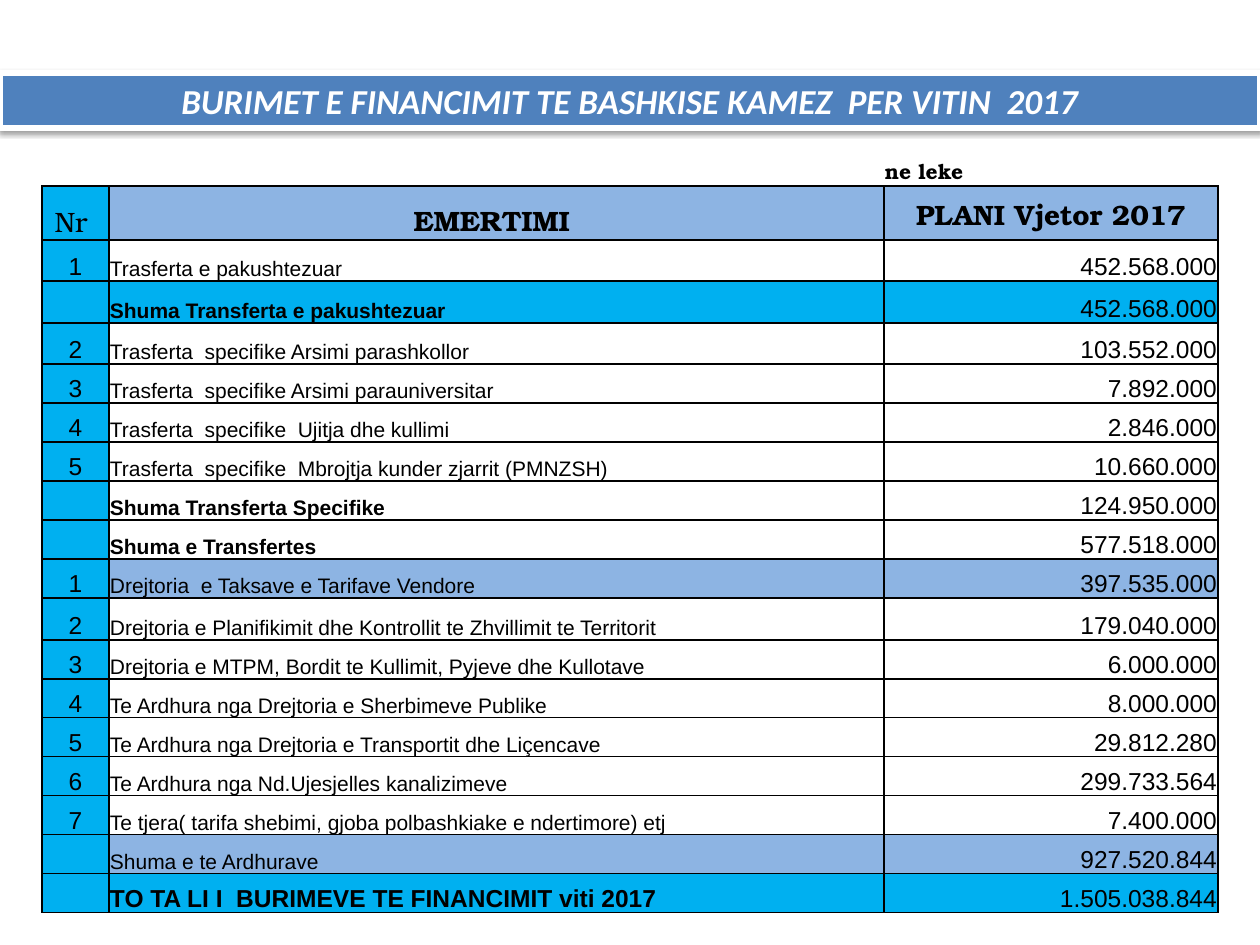
from dataclasses import dataclass

from lxml.etree import SubElement
from pptx import Presentation
from pptx.dml.color import RGBColor
from pptx.enum.shapes import MSO_SHAPE as Shape
from pptx.enum.text import MSO_ANCHOR as Anchor, PP_ALIGN as Align
from pptx.oxml import parse_xml
from pptx.oxml.ns import nsdecls, qn
from pptx.util import Emu, Pt

PX = 914400 / 126


def px(length: int) -> Emu:
    return Emu(round(length * PX))


@dataclass(frozen=True)
class Theme:
    title_font: str = "Calibri"
    header_font: str = "TeX Gyre Bonum"
    body_font: str = "Arial"
    title_size: int = 20
    header_size: int = 16
    value_size: int = 14
    label_size: int = 12
    black: str = "000000"
    white: str = "FFFFFF"
    banner: str = "4F81BD"
    cyan: str = "00B0F0"
    blue: str = "8DB4E3"


THEME = Theme()


@dataclass(frozen=True)
class Style:
    font: str
    size: int
    bold: bool = False
    italic: bool = False
    color: str = THEME.black
    align: Align = Align.LEFT


@dataclass(frozen=True)
class Source:
    number: str
    label: str
    value: str
    fill: str = THEME.white
    bold: bool = False
    height: int = 39
    label_size: int = THEME.label_size


SOURCES = [
    Source("1", "Trasferta e pakushtezuar", "452.568.000", height=41),
    Source("", "Shuma Transferta e pakushtezuar", "452.568.000", THEME.cyan, True, 42),
    Source("2", "Trasferta  specifike Arsimi parashkollor", "103.552.000", height=41),
    Source("3", "Trasferta  specifike Arsimi parauniversitar", "7.892.000"),
    Source("4", "Trasferta  specifike  Ujitja dhe kullimi", "2.846.000"),
    Source("5", "Trasferta  specifike  Mbrojtja kunder zjarrit (PMNZSH)", "10.660.000"),
    Source("", "Shuma Transferta Specifike", "124.950.000", bold=True),
    Source("", "Shuma e Transfertes", "577.518.000", bold=True),
    Source("1", "Drejtoria  e Taksave e Tarifave Vendore", "397.535.000", THEME.blue),
    Source("2", "Drejtoria e Planifikimit dhe Kontrollit te Zhvillimit te Territorit",
           "179.040.000", height=42),
    Source("3", "Drejtoria e MTPM, Bordit te Kullimit, Pyjeve dhe Kullotave", "6.000.000"),
    Source("4", "Te Ardhura nga Drejtoria e Sherbimeve Publike", "8.000.000"),
    Source("5", "Te Ardhura nga Drejtoria e Transportit dhe Liçencave", "29.812.280"),
    Source("6", "Te Ardhura nga Nd.Ujesjelles kanalizimeve", "299.733.564"),
    Source("7", "Te tjera( tarifa shebimi, gjoba polbashkiake e ndertimore) etj", "7.400.000"),
    Source("", "Shuma e te Ardhurave", "927.520.844", THEME.blue),
    Source("", "TO TA LI I  BURIMEVE TE FINANCIMIT viti 2017", "1.505.038.844",
           THEME.cyan, True, label_size=THEME.value_size),
]
COLUMN_WIDTHS = (67, 775, 334)
UNIT_HEIGHT, HEADER_HEIGHT = 39, 54


def write(frame, text: str, style: Style) -> None:
    para = frame.paragraphs[0]
    para.alignment = style.align
    font = para.font
    font.name, font.size = style.font, Pt(style.size)
    font.bold, font.italic = style.bold, style.italic
    font.color.rgb = RGBColor.from_string(style.color)
    if text:
        para.add_run().text = text


def add_borders(cell, visible: tuple[str, ...]) -> None:
    properties = cell._tc.get_or_add_tcPr()
    for side in ("lnL", "lnR", "lnT", "lnB"):
        line = SubElement(properties, qn(f"a:{side}"), w=str(Pt(1)))
        if side in visible:
            fill = SubElement(line, qn("a:solidFill"))
            SubElement(fill, qn("a:srgbClr"), val=THEME.black)
        else:
            SubElement(line, qn("a:noFill"))


def fill_cell(cell, text: str, style: Style, fill: str | None,
              anchor: Anchor = Anchor.BOTTOM,
              borders: tuple[str, ...] = ("lnL", "lnR", "lnT", "lnB")) -> None:
    cell.margin_left = cell.margin_right = cell.margin_top = px(1)
    cell.margin_bottom = 0
    cell.vertical_anchor = anchor
    write(cell.text_frame, text, style)
    add_borders(cell, borders)
    if fill:
        cell.fill.solid()
        cell.fill.fore_color.rgb = RGBColor.from_string(fill)
    else:
        cell.fill.background()


def add_banner(page, text: str) -> None:
    box = page.shapes.add_shape(Shape.RECTANGLE, 0, px(73), px(1260), px(55))
    box.fill.solid()
    box.fill.fore_color.rgb = RGBColor.from_string(THEME.banner)
    box.line.color.rgb = RGBColor.from_string(THEME.white)
    box.line.width = Pt(3)
    box._element.spPr.append(parse_xml(
        f'<a:effectLst {nsdecls("a")}><a:outerShdw blurRad="{Pt(3.1)}" dist="{Pt(1.6)}" '
        f'dir="5400000" rotWithShape="0"><a:srgbClr val="{THEME.black}">'
        '<a:alpha val="38000"/></a:srgbClr></a:outerShdw></a:effectLst>'))
    frame = box.text_frame
    frame.word_wrap = True
    frame.vertical_anchor = Anchor.MIDDLE
    write(frame, text, Style(THEME.title_font, THEME.title_size, True, True,
                             THEME.white, Align.CENTER))


def add_sources_table(page) -> None:
    heights = [UNIT_HEIGHT, HEADER_HEIGHT] + [source.height for source in SOURCES]
    table = page.shapes.add_table(len(heights), len(COLUMN_WIDTHS), px(42), px(147),
                                  px(sum(COLUMN_WIDTHS)), px(sum(heights))).table
    table.first_row = table.horz_banding = False
    for column, width in zip(table.columns, COLUMN_WIDTHS):
        column.width = px(width)
    for row, height in zip(table.rows, heights):
        row.height = px(height)

    # Unit row: only its bottom edge is ruled
    unit = Style(THEME.header_font, THEME.label_size, True)
    for column, text in enumerate(("", "", "ne leke")):
        fill_cell(table.cell(0, column), text, unit, None, borders=("lnB",))

    # Column headings
    headings = (("Nr ", THEME.cyan, False, Anchor.BOTTOM),
                ("EMERTIMI ", THEME.blue, True, Anchor.BOTTOM),
                ("PLANI Vjetor 2017", THEME.blue, True, Anchor.MIDDLE))
    for column, (text, fill, bold, anchor) in enumerate(headings):
        style = Style(THEME.header_font, THEME.header_size, bold, align=Align.CENTER)
        fill_cell(table.cell(1, column), text, style, fill, anchor)

    # Financing sources and subtotals
    number = Style(THEME.body_font, THEME.value_size, align=Align.CENTER)
    value = Style(THEME.body_font, THEME.value_size, align=Align.RIGHT)
    for row, source in enumerate(SOURCES, start=2):
        label = Style(THEME.body_font, source.label_size, source.bold)
        fill_cell(table.cell(row, 0), source.number, number, THEME.cyan)
        fill_cell(table.cell(row, 1), source.label, label, source.fill)
        fill_cell(table.cell(row, 2), source.value, value, source.fill)


def main() -> None:
    deck = Presentation()
    deck.slide_width, deck.slide_height = px(1260), px(945)
    page = deck.slides.add_slide(deck.slide_layouts[6])
    add_banner(page, "BURIMET E FINANCIMIT TE BASHKISE KAMEZ  PER VITIN  2017")
    add_sources_table(page)
    deck.save("out.pptx")


if __name__ == "__main__":
    main()
